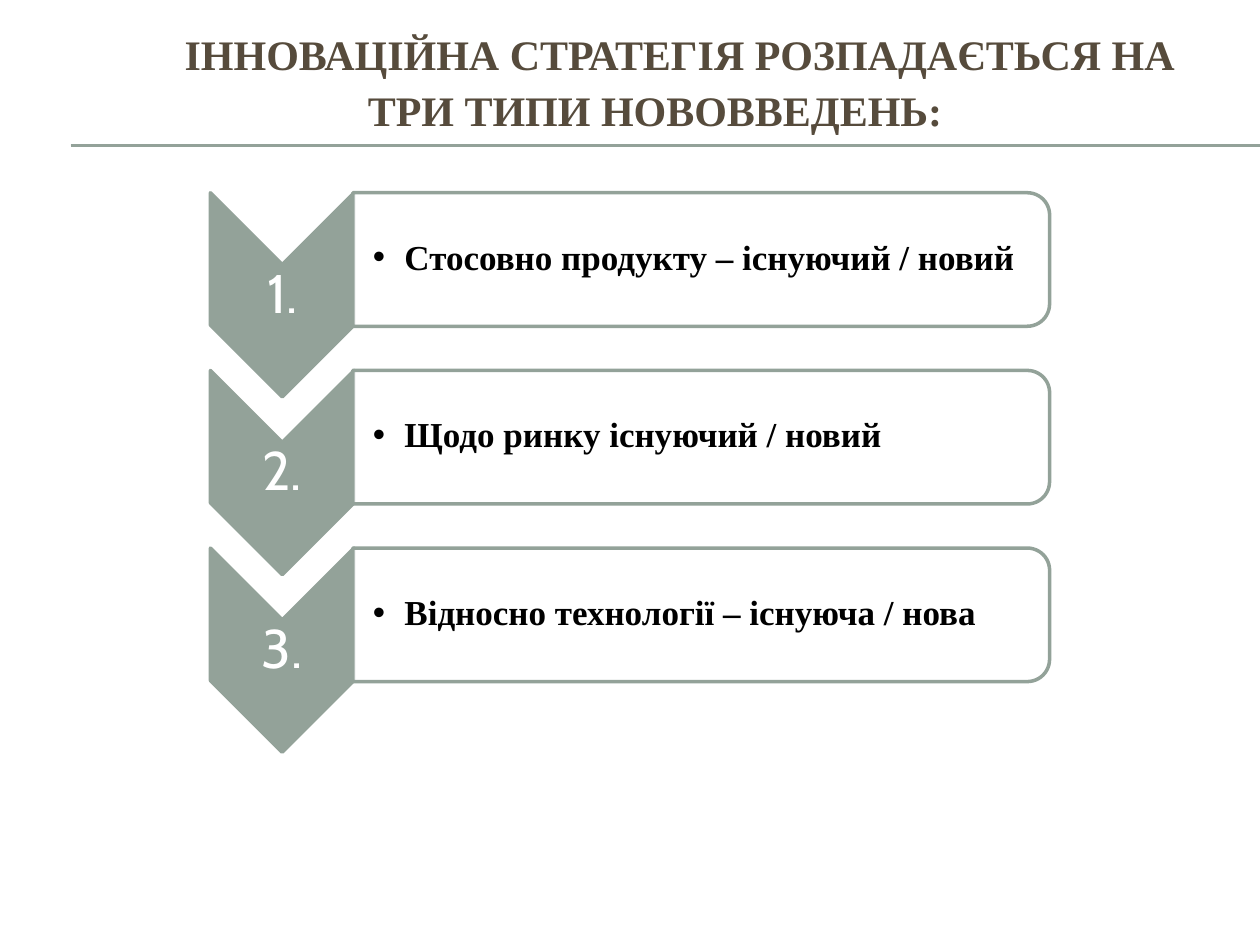
from dataclasses import dataclass

from lxml.etree import SubElement
from pptx import Presentation
from pptx.dml.color import RGBColor
from pptx.enum.shapes import MSO_CONNECTOR, MSO_SHAPE
from pptx.enum.text import MSO_ANCHOR, PP_ALIGN
from pptx.oxml.ns import qn
from pptx.util import Inches, Pt


@dataclass(frozen=True)
class Theme:
    accent: RGBColor = RGBColor.from_string("93A299")
    heading: RGBColor = RGBColor.from_string("564B3C")
    paper: RGBColor = RGBColor.from_string("FFFFFF")
    ink: RGBColor = RGBColor.from_string("000000")
    text_font: str = "Times New Roman"
    number_font: str = "Cabin"
    title_size: int = 24
    number_size: int = 31
    item_size: int = 20
    rule_width: float = 0.75
    outline_width: float = 2


class SlideBuilder:
    columns = 100
    rows = 75

    def __init__(self, deck, theme):
        self.theme = theme
        self.cell_width = deck.slide_width / self.columns
        self.cell_height = deck.slide_height / self.rows
        self.slide = deck.slides.add_slide(deck.slide_layouts[5])
        background = self.slide.background.fill
        background.solid()
        background.fore_color.rgb = theme.paper

    def place(self, column, row, width, height):
        return (
            round(column * self.cell_width),
            round(row * self.cell_height),
            round(width * self.cell_width),
            round(height * self.cell_height),
        )

    def set_text(self, box, text, font, size, color, bold, spacing, insets):
        frame = box.text_frame
        frame.text = text
        frame.word_wrap = True
        frame.vertical_anchor = MSO_ANCHOR.MIDDLE
        frame.margin_left, frame.margin_top, frame.margin_right, frame.margin_bottom = map(Inches, insets)
        para = frame.paragraphs[0]
        para.line_spacing = spacing
        for span in para.runs:
            span.font.name = font
            span.font.size = Pt(size)
            span.font.bold = bold
            span.font.color.rgb = color
        return para

    def title(self, text, *cells):
        theme = self.theme
        box = self.slide.shapes.title
        box.left, box.top, box.width, box.height = self.place(*cells)
        para = self.set_text(box, text, theme.text_font, theme.title_size, theme.heading,
                             True, 1.1, (0.1, 0.05, 0.1, 0.49))
        para.alignment = PP_ALIGN.CENTER
        self.indent(para, 0.34, 0.39)

    def indent(self, para, margin, first_line):
        properties = para._p.get_or_add_pPr()
        properties.set("marL", str(Inches(margin)))
        properties.set("indent", str(Inches(first_line)))
        return properties

    def rule(self, start, end, row):
        left, top, width, _ = self.place(start, row, end - start, 0)
        line = self.slide.shapes.add_connector(MSO_CONNECTOR.STRAIGHT, left, top, left + width, top)
        line.line.color.rgb = self.theme.accent
        line.line.width = Pt(self.theme.rule_width)
        SubElement(line._element.spPr, qn("a:effectLst"))

    def turned_shape(self, kind, column, row, width, height, color):
        center_column, center_row = column + width / 2, row + height / 2
        cells = self.place(center_column - height / 2, center_row - width / 2, height, width)
        shape = self.slide.shapes.add_shape(kind, *cells)
        shape.rotation = 90
        shape.shadow.inherit = False
        shape.fill.solid()
        shape.fill.fore_color.rgb = color
        shape.line.color.rgb = self.theme.accent
        shape.line.width = Pt(self.theme.outline_width)
        outline = shape._element.spPr.find(qn("a:ln"))
        SubElement(outline, qn("a:round"))
        return shape

    def number(self, text, column, row):
        theme = self.theme
        self.turned_shape(MSO_SHAPE.CHEVRON, column, row, 11.4, 16.2, theme.accent)
        box = self.slide.shapes.add_textbox(*self.place(column, row + 5.7, 11.4, 4.9))
        para = self.set_text(box, text, theme.number_font, theme.number_size, theme.paper,
                             False, 0.9, (0.02,) * 4)
        para.alignment = PP_ALIGN.CENTER

    def panel(self, text, column, row):
        theme = self.theme
        shape = self.turned_shape(MSO_SHAPE.ROUND_2_SAME_RECTANGLE, column, row, 55.3, 10.6, theme.paper)
        color = shape._element.spPr.find(qn("a:solidFill"))[0]
        SubElement(color, qn("a:alpha"), val="90000")
        box = self.slide.shapes.add_textbox(*self.place(column, row + 0.5, 54.8, 9.5))
        para = self.set_text(box, text, theme.text_font, theme.item_size, theme.ink,
                             True, 0.9, (0.16, 0.01, 0.01, 0.01))
        properties = self.indent(para, 0.25, -0.25)
        SubElement(properties, qn("a:buFont"), typeface="Arial")
        SubElement(properties, qn("a:buChar"), char="•")


def main():
    deck = Presentation()
    deck.slide_width, deck.slide_height = Inches(10), Inches(7.5)
    builder = SlideBuilder(deck, Theme())
    for row in (11.5, 11.6):
        builder.rule(5.6, 100, row)
    builder.title("ІННОВАЦІЙНА СТРАТЕГІЯ РОЗПАДАЄТЬСЯ НА ТРИ ТИПИ НОВОВВЕДЕНЬ:", 2.8, 2.9, 95, 11.2)
    innovations = (
        "Стосовно продукту – існуючий / новий",
        "Щодо ринку існуючий / новий",
        "Відносно технології – існуюча / нова",
    )
    first_row, row_step = 15.3, 14.1
    for index, innovation in enumerate(innovations):
        row = first_row + index * row_step
        builder.number(f"{index + 1}.", 16.7, row)
        builder.panel(innovation, 28, row)
    deck.save("out.pptx")


if __name__ == "__main__":
    main()
